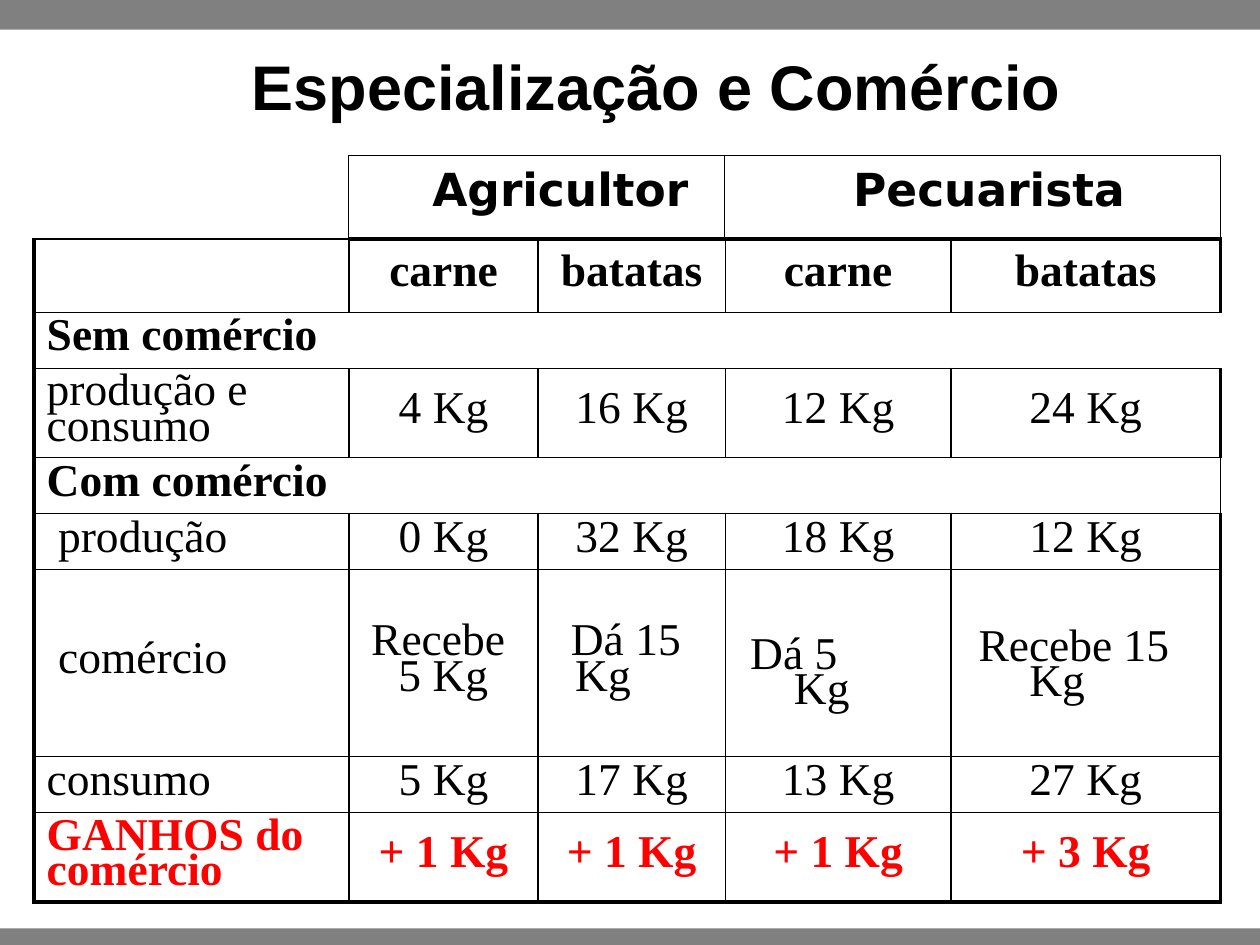
from lxml import etree
from pptx import Presentation
from pptx.dml.color import RGBColor
from pptx.enum.shapes import MSO_CONNECTOR, MSO_SHAPE
from pptx.enum.text import MSO_ANCHOR, PP_ALIGN
from pptx.oxml.ns import qn
from pptx.util import Pt

LEFT, CENTER = PP_ALIGN.LEFT, PP_ALIGN.CENTER
MIDDLE, BOTTOM = MSO_ANCHOR.MIDDLE, MSO_ANCHOR.BOTTOM
RECT, LINE = MSO_SHAPE.RECTANGLE, MSO_CONNECTOR.STRAIGHT
BLACK, GRAY, RED = "000000", "808080", "FF0000"
THIN, THICK = 1, 2.25
PLAIN = "{2D5ABB26-0587-4C30-8999-92F81FD0307C}"

COLS = [180, 108, 107, 129, 154]
ROWS = [42, 32, 51, 32, 32, 107, 32, 51]
CELLS = [
    ["", "carne", "batatas", "carne", "batatas"],
    ["Sem comércio"],
    ["produção e consumo", "4 Kg", "16 Kg", "12 Kg", "24 Kg"],
    ["Com comércio"],
    [" produção", "0 Kg", "32 Kg", "18 Kg", "12 Kg"],
    [" comércio", "Recebe 5 Kg", "Dá 15 Kg", "Dá 5 Kg", "Recebe 15 Kg"],
    ["consumo", "5 Kg", "17 Kg", "13 Kg", "27 Kg"],
    ["GANHOS do comércio", "+ 1 Kg", "+ 1 Kg", "+ 1 Kg", "+ 3 Kg"],
]
BOLD = {0, 1, 3, 7}
TRADE = 5
HANG = {1: (5.4, 21, 0, 0), 2: (11.5, 14, 0, 0),
        3: (7, 32, 15, 26), 4: (8.5, 37.5, 6, 0)}


def color(code):
    return RGBColor.from_string(code)


class Deck:
    face = "Times New Roman"
    size = 26

    def __init__(self, wide, high):
        self.prs = Presentation()
        self.prs.slide_width, self.prs.slide_height = Pt(wide), Pt(high)
        self.slide = self.prs.slides.add_slide(self.prs.slide_layouts[5])
        self.shapes = self.slide.shapes

    def style(self, para, face=None, size=None, bold=False, tint=BLACK):
        for run in para.runs:
            font = run.font
            font.name, font.size = face or self.face, Pt(size or self.size)
            font.bold, font.color.rgb = bold, color(tint)

    def title(self, text, box):
        shape = self.shapes.title
        shape.left, shape.top, shape.width, shape.height = map(Pt, box)
        frame = shape.text_frame
        frame.text, frame.vertical_anchor = text, BOTTOM
        para = frame.paragraphs[0]
        para.alignment, para.line_spacing = CENTER, 1.3
        self.style(para, "Arial", 36, True)

    def rect(self, box, fill=None, line=None):
        shape = self.shapes.add_shape(RECT, *map(Pt, box))
        shape.shadow.inherit = False
        if fill:
            shape.fill.solid()
            shape.fill.fore_color.rgb = color(fill)
        else:
            shape.fill.background()
        if line:
            shape.line.color.rgb, shape.line.width = color(line), Pt(0.75)
        else:
            shape.line.fill.background()

    def line(self, *ends):
        rule = self.shapes.add_connector(LINE, *map(Pt, ends))
        rule.line.color.rgb, rule.line.width = color(BLACK), Pt(0.75)
        etree.SubElement(rule._element.spPr, qn("a:effectLst"))

    def label(self, text, box, inset):
        frame = self.shapes.add_textbox(*map(Pt, box)).text_frame
        frame.word_wrap, frame.text = True, text
        frame.margin_left = Pt(inset)
        self.style(frame.paragraphs[0], "DejaVu Sans", bold=True)

    def border(self, cell, widths):
        props = cell._tc.get_or_add_tcPr()
        for spot, (side, width) in enumerate(zip("LRTB", widths)):
            edge = etree.Element(qn("a:ln" + side), w=str(Pt(width)))
            if width:
                fill = etree.SubElement(edge, qn("a:solidFill"))
                etree.SubElement(fill, qn("a:srgbClr"), val=BLACK)
            else:
                etree.SubElement(edge, qn("a:noFill"))
            props.insert(spot, edge)

    def fill(self, cell, row, col, text):
        cell.text, cell.vertical_anchor = text, MIDDLE
        para = cell.text_frame.paragraphs[0]
        para.line_spacing, para.space_before = 0.7, Pt(3.6)
        para.alignment = CENTER if col else LEFT
        self.style(para, bold=row in BOLD, tint=RED if row == 7 else BLACK)
        if row == TRADE and col in HANG:
            self.hang(cell, para, *HANG[col])

    def hang(self, cell, para, first, rest, drop, trim):
        para.alignment = LEFT
        props = para._p.get_or_add_pPr()
        props.set("marL", str(Pt(rest)))
        props.set("indent", str(Pt(first - rest)))
        cell.margin_top = Pt(3.6 + drop)
        cell.margin_right = Pt(7.2 + trim)

    def table(self, left, top):
        box = left, top, sum(COLS), sum(ROWS)
        frame = self.shapes.add_table(len(ROWS), len(COLS), *map(Pt, box))
        grid = frame.table
        grid._tbl.tblPr.find(qn("a:tableStyleId")).text = PLAIN
        grid.first_row = grid.horz_banding = False
        for col, width in zip(grid.columns, COLS):
            col.width = Pt(width)
        for row, high in zip(grid.rows, ROWS):
            row.height = Pt(high)
        last = len(COLS) - 1
        for row, texts in enumerate(CELLS):
            inner = 0 if len(texts) == 1 else THIN
            end = {1: 0, 3: THIN}.get(row, THICK)
            for col in range(len(COLS)):
                cell = grid.cell(row, col)
                cell.fill.background()
                self.border(cell, (
                    inner if col else THICK,
                    end if col == last else inner,
                    THICK if row == 0 and col else THIN,
                    THICK if row == len(ROWS) - 1 else THIN,
                ))
                if col < len(texts):
                    self.fill(cell, row, col, texts[col])


def main():
    deck = Deck(720, 540)
    deck.rect((0, 530.5, 720, 11), GRAY)
    deck.rect((-0.5, -0.5, 720.5, 17.5), GRAY)
    deck.title("Especialização e Comércio", (124, 4, 502, 70))
    deck.table(19.5, 136.5)
    deck.label("Agricultor", (223, 88.5, 198, 39), 24)
    deck.label("Pecuarista", (457, 88.5, 210, 39), 30.5)
    deck.rect((199.3, 88.7, 498, 48), line=BLACK)
    deck.line(414.2, 88.7, 414.2, 136.7)
    deck.prs.save("out.pptx")


if __name__ == "__main__":
    main()
